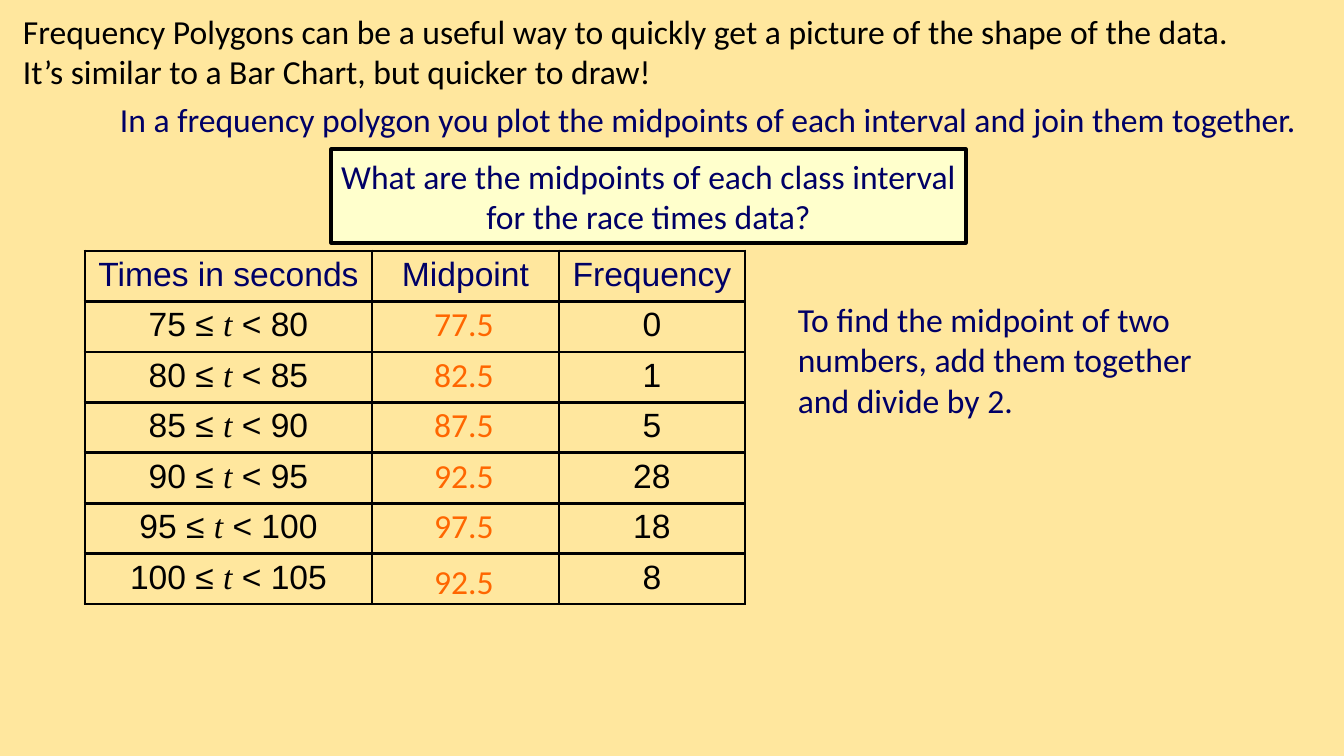
import pptx
import pptx.dml.color
import pptx.enum.shapes
import pptx.enum.text
import pptx.oxml
import pptx.util
from pptx.oxml.ns import nsdecls

# Content: text, (left, top, width, height) in px, colour, alignment, wrap
NOTES = [
    ("To find the midpoint of two numbers, add them together and divide by 2.",
     (788, 294, 417, 132), "navy", "LEFT", True),
    ("In a frequency polygon you plot the midpoints of each interval and join them together.",
     (110, 94, 1199, 50), "navy", "LEFT", False),
    ("Frequency Polygons can be a useful way to quickly get a picture of the shape "
     "of the data. It’s similar to a Bar Chart, but quicker to draw!",
     (13, 6, 1246, 92), "black", "LEFT", True),
]
QUESTION = "What are the midpoints of each class interval for the race times data?"
QUESTION_BOX = (331, 149, 635, 94)
HEADINGS = ["Times in seconds", "Midpoint", "Frequency"]
RACE_TIMES = [  # lower bound, upper bound, midpoint shown, frequency
    (75, 80, "77.5", 0),
    (80, 85, "82.5", 1),
    (85, 90, "87.5", 5),
    (90, 95, "92.5", 28),
    (95, 100, "97.5", 18),
    (100, 105, "92.5", 8),
]

# Theme and layout
THEME = {
    "background": "FFE79E", "panel": "FFFFCC", "navy": "000066",
    "black": "000000", "orange": "FF6600",
    "size": 24, "line": 2.25,
    "body": "Calibri", "table": "Arial", "variable": "Times New Roman",
}
PX = 914400 / 100.8
SLIDE_SIZE = (1344, 756)
TABLE_BOX = (85, 251, 660, 353)
COLUMN_WIDTHS = [287, 187, 186]
ROW_HEIGHT = TABLE_BOX[3] / (len(RACE_TIMES) + 1)
MIDPOINT_LEFT, MIDPOINT_WIDTH, MIDPOINT_HEIGHT = 397, 134, 50
MIDPOINT_RISE = 3
LAST_MIDPOINT_DROP = 5


def emu(px):
    return pptx.util.Emu(round(px * PX))


def color(name):
    return pptx.dml.color.RGBColor.from_string(THEME[name])


def apply(target, values):
    for name, value in values.items():
        setattr(target, name, value)


def write(paragraph, pieces, ink, align="CENTER"):
    paragraph.alignment = getattr(pptx.enum.text.PP_ALIGN, align)
    for words, face in pieces:
        run = paragraph.add_run()
        run.text = words
        apply(run.font, {
            "size": pptx.util.Pt(THEME["size"]),
            "name": THEME[face],
            "italic": face == "variable",
        })
        run.font.color.rgb = color(ink)


def fill_frame(frame, words, ink, align="CENTER", wrap=True):
    apply(frame, {
        "word_wrap": wrap,
        "auto_size": pptx.enum.text.MSO_AUTO_SIZE.SHAPE_TO_FIT_TEXT,
    })
    write(frame.paragraphs[0], [(words, "body")], ink, align)


def add_note(slide, words, box, ink, align="CENTER", wrap=True):
    note = slide.shapes.add_textbox(*map(emu, box))
    fill_frame(note.text_frame, words, ink, align, wrap)


def add_question(slide):
    panel = slide.shapes.add_shape(
        pptx.enum.shapes.MSO_SHAPE.RECTANGLE, *map(emu, QUESTION_BOX))
    panel.shadow.inherit = False
    panel.fill.solid()
    panel.fill.fore_color.rgb = color("panel")
    panel.line.color.rgb = color("black")
    panel.line.width = pptx.util.Pt(THEME["line"])
    fill_frame(panel.text_frame, QUESTION, "navy")


def add_borders(cell):
    properties = cell._tc.get_or_add_tcPr()
    width = pptx.util.Pt(THEME["line"])
    for side in ("lnL", "lnR", "lnT", "lnB"):
        properties.append(pptx.oxml.parse_xml(
            f'<a:{side} {nsdecls("a")} w="{width}"><a:solidFill>'
            f'<a:srgbClr val="{THEME["black"]}"/></a:solidFill></a:{side}>'))


def add_race_table(slide):
    rows = [[[(heading, "table")] for heading in HEADINGS]]
    for low, high, _, frequency in RACE_TIMES:
        interval = [(f"{low} ≤ ", "table"), ("t", "variable"), (f" < {high}", "table")]
        rows.append([interval, [], [(str(frequency), "table")]])

    table = slide.shapes.add_table(
        len(rows), len(HEADINGS), *map(emu, TABLE_BOX)).table
    apply(table, {"first_row": False, "horz_banding": False})
    for column, width in zip(table.columns, COLUMN_WIDTHS):
        column.width = emu(width)
    for r, row in enumerate(rows):
        table.rows[r].height = emu(ROW_HEIGHT)
        for c, pieces in enumerate(row):
            cell = table.cell(r, c)
            add_borders(cell)
            cell.fill.background()
            write(cell.text_frame.paragraphs[0], pieces, "black" if r else "navy")


def add_midpoints(slide):
    last = len(RACE_TIMES)
    for row, (_, _, midpoint, _) in enumerate(RACE_TIMES, 1):
        top = TABLE_BOX[1] + row * ROW_HEIGHT - MIDPOINT_RISE
        if row == last:
            top += LAST_MIDPOINT_DROP
        add_note(slide, midpoint,
                 (MIDPOINT_LEFT, top, MIDPOINT_WIDTH, MIDPOINT_HEIGHT), "orange")


def main():
    deck = pptx.Presentation()
    deck.slide_width, deck.slide_height = map(emu, SLIDE_SIZE)
    slide = deck.slides.add_slide(deck.slide_layouts[6])
    slide.background.fill.solid()
    slide.background.fill.fore_color.rgb = color("background")

    add_question(slide)
    add_race_table(slide)
    add_midpoints(slide)
    for note in NOTES:
        add_note(slide, *note)
    deck.save("out.pptx")


if __name__ == "__main__":
    main()
